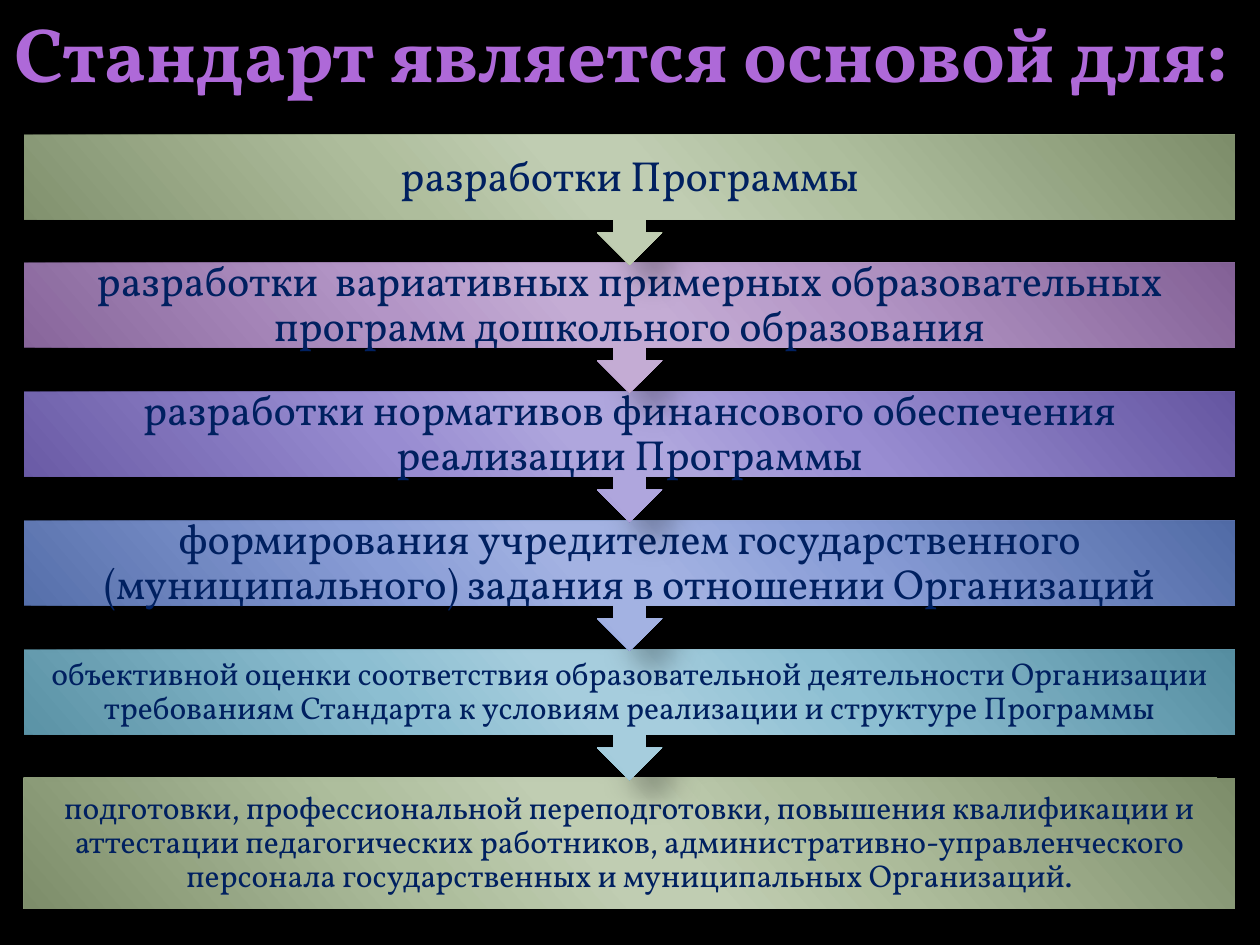
from lxml import etree
from pptx import Presentation
from pptx.dml.color import RGBColor
from pptx.enum.shapes import MSO_SHAPE
from pptx.enum.text import MSO_ANCHOR, PP_ALIGN
from pptx.oxml import parse_xml
from pptx.util import Pt

PX = 7257  # EMU per px, 126 px to the inch
WIDTH, HEIGHT = 1260, 945
NS = 'xmlns:a="http://schemas.openxmlformats.org/drawingml/2006/main"'
FONT = "Vollkorn"
RECT, CALLOUT = MSO_SHAPE.RECTANGLE, MSO_SHAPE.UP_ARROW_CALLOUT
CENTER, TOP, MIDDLE = PP_ALIGN.CENTER, MSO_ANCHOR.TOP, MSO_ANCHOR.MIDDLE

COLORS = {"background": "000000", "text": "002060"}
# Edge, left mid-tone, highlight and right mid-tone of each bar
BARS = {
    "green": ("7D8D6A", "AEBD9C", "C0CDB2", "AEBE9D"),
    "purple": ("836196", "B395C6", "C4ACD4", "B496C6"),
    "violet": ("6556A1", "988CD1", "AFA6DD", "998DD2"),
    "blue": ("516BA6", "899DD6", "A3B2E2", "8A9ED7"),
    "teal": ("568EA1", "8CBED1", "A6CDDD", "8DBFD2"),
}
TITLE_STOPS = [(0, "552C6D"), (78, "AE69D8"), (100, "F7F0FB")]
STEPS = [
    ("разработки Программы", "green", 24),
    ("разработки  вариативных примерных образовательных программ "
     "дошкольного образования", "purple", 24),
    ("разработки нормативов финансового обеспечения реализации Программы",
     "violet", 24),
    ("формирования учредителем государственного (муниципального) задания "
     "в отношении Организаций", "blue", 24),
    ("объективной оценки соответствия образовательной деятельности Организации "
     "требованиям Стандарта к условиям реализации и структуре Программы",
     "teal", 18),
    ("подготовки, профессиональной переподготовки, повышения квалификации и "
     "аттестации педагогических работников, административно-управленческого "
     "персонала государственных и муниципальных Организаций.", "green", 18),
]
SHADOW = (f'<a:effectLst {NS}><a:outerShdw blurRad="190500" dist="228600" '
          'dir="2700000" rotWithShape="0"><a:srgbClr val="000000">'
          '<a:alpha val="26000"/></a:srgbClr></a:outerShdw></a:effectLst>')
OUTLINE = (f'<a:ln {NS} w="1905"><a:solidFill><a:srgbClr val="000000"/>'
           '</a:solidFill></a:ln>')


def gradient(stops, angle):
    """Return a linear gradFill element; stops are (percent, hex) pairs."""
    gs = "".join(f'<a:gs pos="{pos * 1000}"><a:srgbClr val="{color}"/></a:gs>'
                 for pos, color in stops)
    return parse_xml(f'<a:gradFill {NS} rotWithShape="1"><a:gsLst>{gs}</a:gsLst>'
                     f'<a:lin ang="{angle * 60000}" scaled="0"/></a:gradFill>')


def add_text(text, x, y, w, h, size, color=None, bold=False, anchor=MIDDLE,
             inset_x=12, inset_y=6, spacing=1.0):
    """Add a centred text box and return its run."""
    s = slide.shapes.add_textbox(x * PX, y * PX, w * PX, h * PX)
    tf = s.text_frame
    tf.word_wrap = True
    tf.vertical_anchor = anchor
    tf.margin_left = tf.margin_right = inset_x * PX
    tf.margin_top = tf.margin_bottom = inset_y * PX
    p = tf.paragraphs[0]
    p.alignment = CENTER
    p.line_spacing = spacing
    r = p.add_run()
    r.text = text
    r.font.size, r.font.name, r.font.bold = Pt(size), FONT, bold
    if color:
        r.font.color.rgb = RGBColor.from_string(color)
    return r


prs = Presentation()
prs.slide_width, prs.slide_height = WIDTH * PX, HEIGHT * PX
slide = prs.slides.add_slide(prs.slide_layouts[6])
bg = slide.background.fill
bg.solid()
bg.fore_color.rgb = RGBColor.from_string(COLORS["background"])

title = add_text("Стандарт является основой для: ", 0, 0, WIDTH, 106, 44,
                 bold=True, anchor=TOP)
rPr = title.font._element
rPr.insert(0, parse_xml(OUTLINE))
rPr.insert(1, gradient(TITLE_STOPS, 90))

# Drawn from the bottom up, so that each arrow lies over the next bar
left, width, first_top, last = 24, 1211, 135, len(STEPS) - 1
for i, (text, hue, size) in reversed(list(enumerate(STEPS))):
    top = first_top + i * 515 // 4
    kind, height, text_h = (RECT, 131, 131) if i == last else (CALLOUT, 130, 85)
    s = slide.shapes.add_shape(kind, left * PX, top * PX, width * PX, height * PX)
    s.rotation = 0 if i == last else 180
    s.line.fill.background()
    edge, mid_left, light, mid_right = BARS[hue]
    stops = [(0, edge), (33, mid_left), (47, light), (53, light),
             (68, mid_right), (100, edge)]
    ln = s.line._ln
    ln.addprevious(gradient(stops, 139))
    ln.addnext(etree.fromstring(SHADOW))
    inset = 24 if size == 24 else 18
    add_text(text, left, top, width, text_h, size, COLORS["text"],
             inset_x=inset, inset_y=inset, spacing=0.9)

prs.save("out.pptx")
